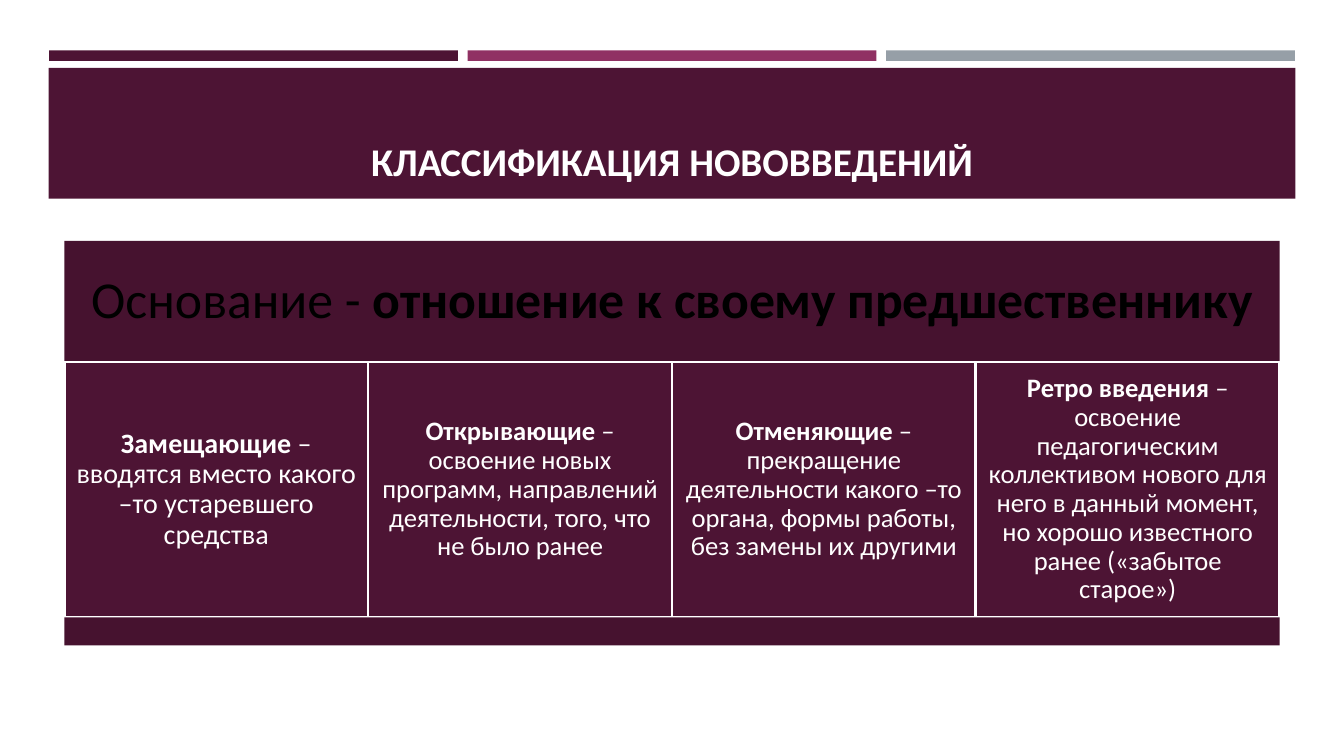
"""Build the slide that classifies innovations by their relation to a predecessor."""
from pptx import Presentation
from pptx.dml.color import RGBColor
from pptx.enum import shapes, text
from pptx.util import Pt

PLUM, DARK_PLUM, WHITE = "4D1434", "46122F", "FFFFFF"


def add_box(left, top, width, height, fill):
    sp = s.shapes.add_shape(shapes.MSO_SHAPE.RECTANGLE, Pt(left), Pt(top), Pt(width), Pt(height))
    sp.shadow.inherit = False
    sp.fill.solid()
    sp.fill.fore_color.rgb = RGBColor.from_string(fill)
    sp.line.fill.background()
    return sp


def write(sp, runs, size, color, inset, spacing=0.9, anchor=text.MSO_ANCHOR.MIDDLE):
    tf = sp.text_frame
    tf.word_wrap = True
    tf.auto_size = text.MSO_AUTO_SIZE.NONE
    tf.vertical_anchor = anchor
    tf.margin_left = tf.margin_right = tf.margin_top = tf.margin_bottom = Pt(inset)
    p = tf.paragraphs[0]
    p.alignment = text.PP_ALIGN.CENTER
    p.line_spacing = spacing
    for words, bold in runs:
        r = p.add_run()
        r.text = words
        r.font.name = "Calibri"
        r.font.size = Pt(size)
        r.font.bold = bold
        r.font.color.rgb = RGBColor.from_string(color)


prs = Presentation()
prs.slide_width, prs.slide_height = Pt(960), Pt(540)
s = prs.slides.add_slide(prs.slide_layouts[5])

for i, color in enumerate([PLUM, "903163", "969FA7"]):
    add_box(35 + 299 * i, 36, 292, 7.5, color)
add_box(34.75, 48.5, 890.5, 93.5, PLUM)

title = s.shapes.title
title.left, title.top, title.width, title.height = Pt(46), Pt(55.5), Pt(868), Pt(80)
write(title, [("КЛАССИФИКАЦИЯ НОВОВВЕДЕНИЙ", True)], 28, WHITE, 3.6, 0.9, text.MSO_ANCHOR.BOTTOM)
s.shapes._spTree.append(title._element)

left, width = 46, 868
header = add_box(left, 172, width, 87, DARK_PLUM)
write(header, [("Основание - ", False), ("отношение к своему предшественнику", True)], 37, "000000", 10.8)

kinds = [
    ("Замещающие", " – вводятся вместо какого –то устаревшего средства", 20),
    ("Открывающие", " – освоение новых программ, направлений деятельности, того, что не было ранее", 19),
    ("Отменяющие", " – прекращение деятельности какого –то органа, формы работы, без замены их другими", 19),
    ("Ретро введения", " – освоение педагогическим коллективом нового для него в данный момент, "
     "но хорошо известного ранее («забытое старое»)", 19),
]
column = width / len(kinds)
for i, (name, meaning, size) in enumerate(kinds):
    cell = add_box(left + column * i, 258.75, column, 182, PLUM)
    cell.line.color.rgb = RGBColor.from_string(WHITE)
    cell.line.width = Pt(1.75)
    write(cell, [(name, True), (meaning, False)], size, WHITE, 5.76)

add_box(left, 441, width, 20, DARK_PLUM)

prs.save("out.pptx")
